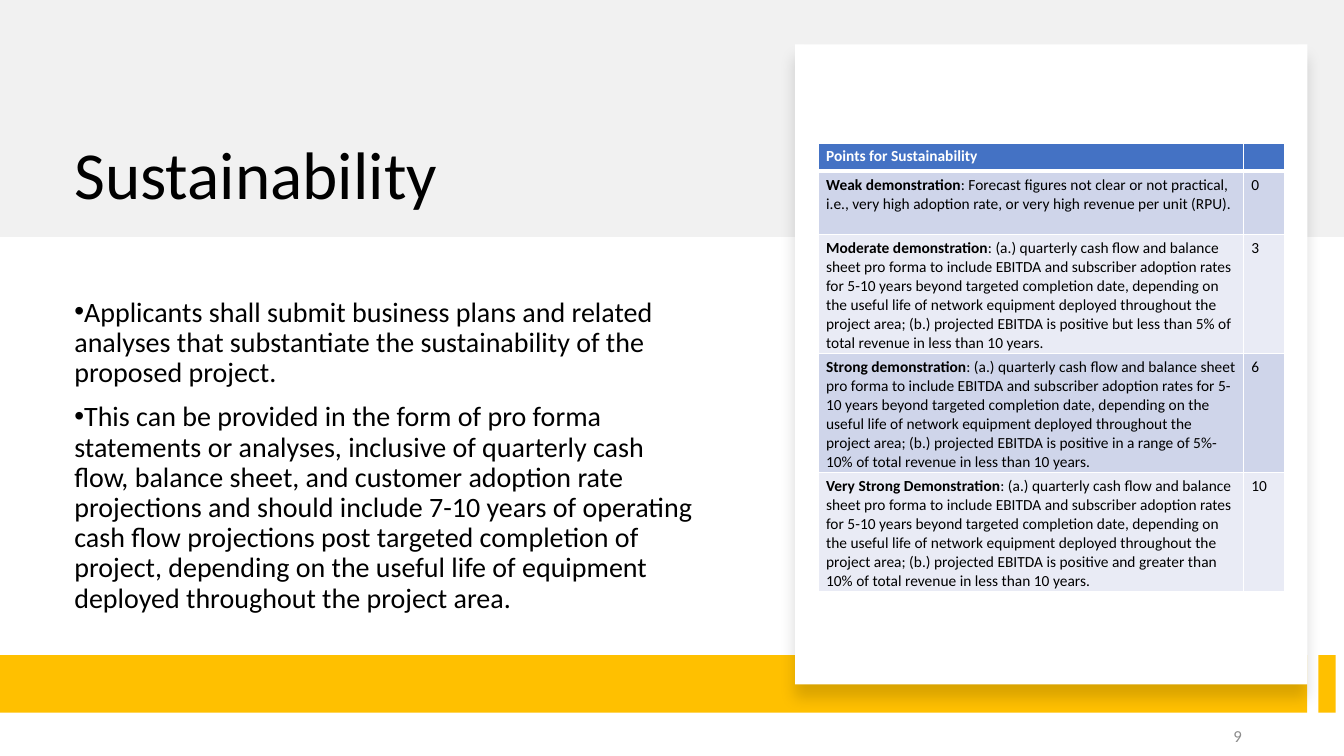
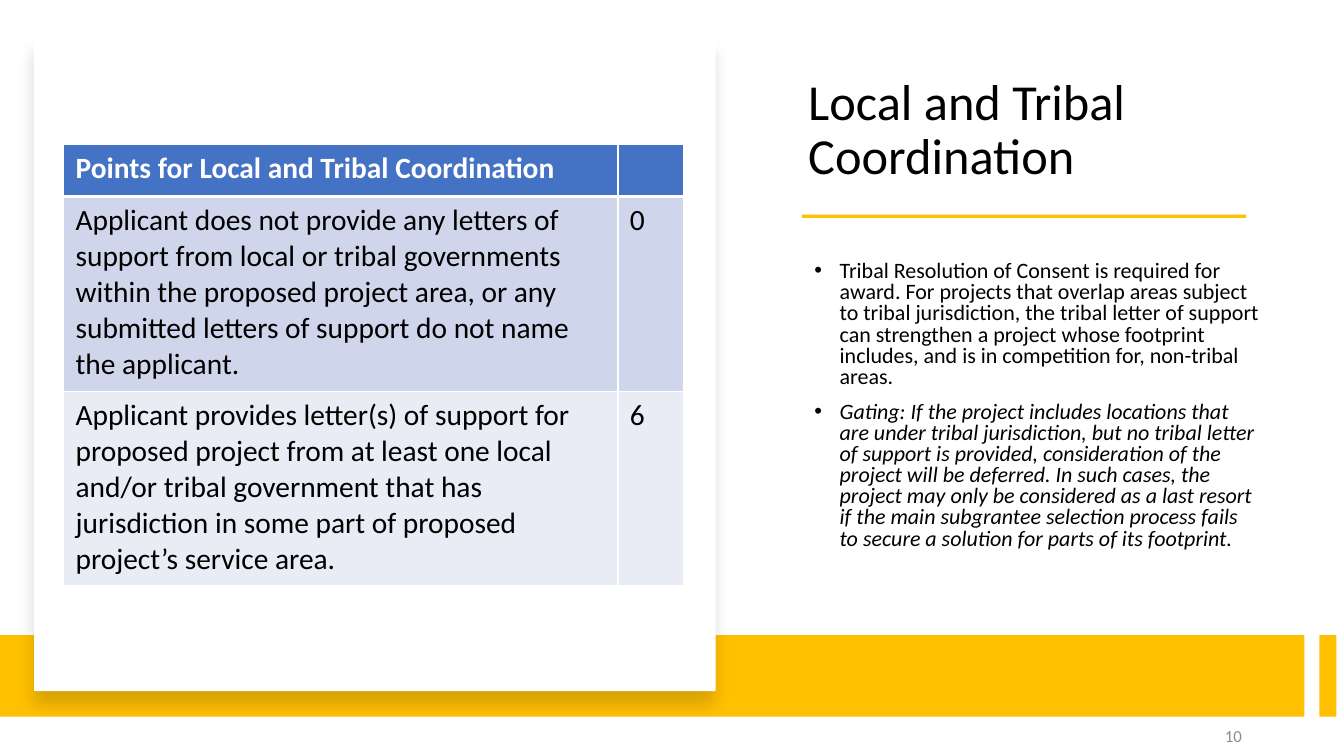
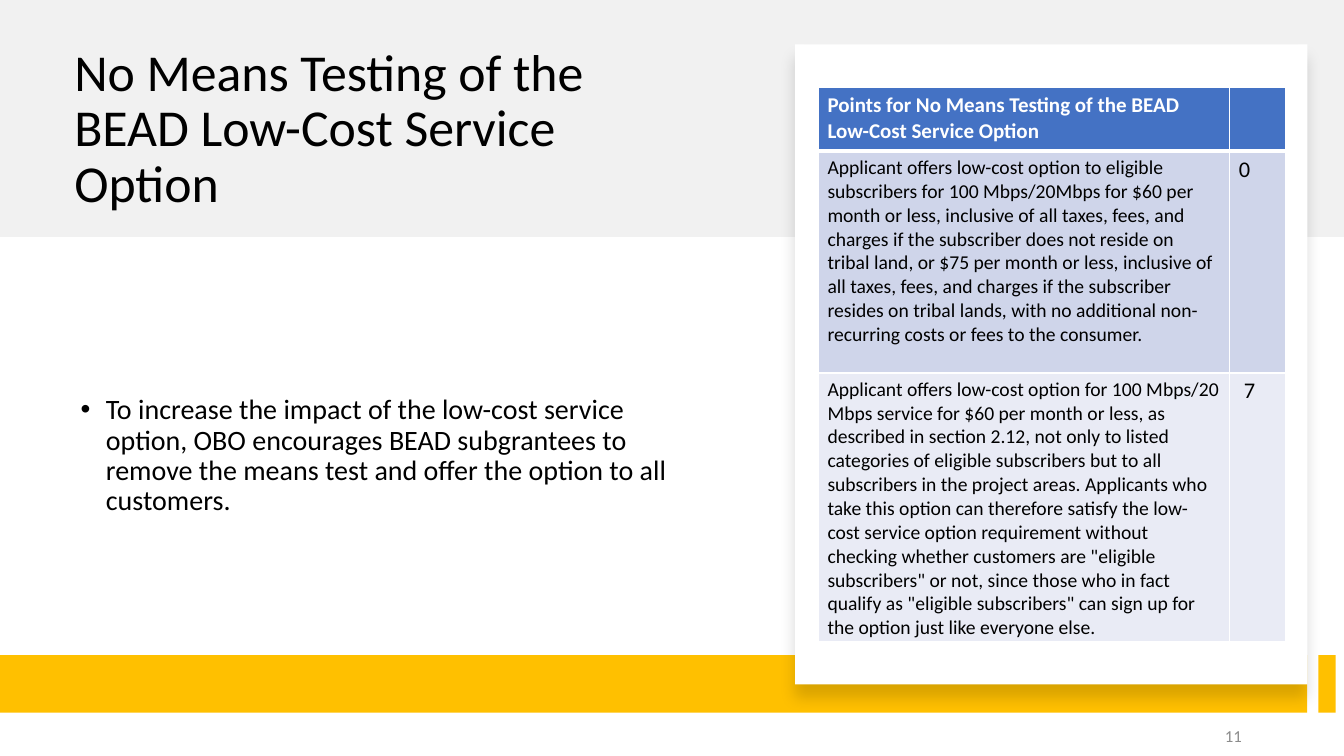
from dataclasses import dataclass
from typing import NamedTuple, Optional

from lxml.etree import SubElement
from pptx import Presentation
from pptx.dml.color import RGBColor
from pptx.enum.shapes import MSO_SHAPE as Preset
from pptx.enum.text import MSO_ANCHOR as Anchor, PP_ALIGN as Align
from pptx.oxml import parse_xml
from pptx.oxml.ns import nsdecls, qn
from pptx.shapes.autoshape import Shape
from pptx.slide import Slide
from pptx.table import _Cell as Cell
from pptx.text.text import TextFrame, _Paragraph as Paragraph
from pptx.util import Pt

FONT = "Calibri"
BLACK, WHITE = "000000", "FFFFFF"
GOLD, BAND_GREY, NUMBER_GREY = "FFC000", "D9D9D9", "8C8C8C"
HEADER_BLUE, ROW_DARK, ROW_LIGHT = "4472C4", "CFD5EA", "E9EBF5"


class Box(NamedTuple):
    left: float
    top: float
    width: float
    height: float


class Run(NamedTuple):
    text: str
    bold: bool = False
    italic: bool = False


class ScoreRow(NamedTuple):
    runs: list[Run]
    score: str
    height: float


@dataclass
class Layout:
    title: Box
    body: Box
    card: Box
    footer_band: Box
    footer_tab: Box
    header_band: Optional[Box] = None
    title_rule: Optional[Box] = None


@dataclass
class ScoreTable:
    left: float
    top: float
    columns: tuple[float, float]
    inset_x: float
    inset_y: float
    header: str
    header_height: float
    header_size: float
    text_size: float
    score_size: float
    rows: list[ScoreRow]


@dataclass
class Page:
    layout: Layout
    number: str
    title: str
    title_size: float
    bullets: list[Run]
    bullet_size: float
    table: ScoreTable
    bullet_margin: float = 22.5
    line_spacing: float = 0.9
    body_bottom_inset: float = 3.6


NUMBER_BOX = Box(678.2, 511.2, 216, 28.8)

CARD_RIGHT = Layout(
    title=Box(46, 27.4, 460, 129),
    body=Box(46, 206.6, 459.4, 238.3),
    card=Box(568, 31.7, 365.8, 457.2),
    footer_band=Box(0, 468, 933.8, 41),
    footer_tab=Box(941.8, 468, 12.2, 41),
    header_band=Box(0, 0, 960, 169.2),
)
CARD_LEFT = Layout(
    title=Box(570.2, 41.8, 337, 94.3),
    body=Box(570.2, 195.8, 337, 239),
    card=Box(24.5, 28, 486.7, 465.8),
    footer_band=Box(0, 453.6, 931.7, 58.3),
    footer_tab=Box(942.5, 453.6, 12.2, 58.3),
    title_rule=Box(573, 153.4, 317, 2.2),
)

PRO_FORMA = (
    ": (a.) quarterly cash flow and balance sheet pro forma to include EBITDA and "
    "subscriber adoption rates for 5-10 years beyond targeted completion date, depending "
    "on the useful life of network equipment deployed throughout the project area; "
    "(b.) projected EBITDA is positive {} of total revenue in less than 10 years."
)


def graded_row(grade: str, margin: str, score: str) -> ScoreRow:
    return ScoreRow([Run(grade, bold=True), Run(PRO_FORMA.format(margin))], score, 83.5)


PAGES = [
    Page(
        CARD_RIGHT, "9", "Sustainability", 48,
        [
            Run("Applicants shall submit business plans and related analyses that "
                "substantiate the sustainability of the proposed project."),
            Run("This can be provided in the form of pro forma statements or analyses, "
                "inclusive of quarterly cash flow, balance sheet, and customer adoption rate "
                "projections and should include 7-10 years of operating cash flow projections "
                "post targeted completion of project, depending on the useful life of "
                "equipment deployed throughout the project area."),
        ],
        20,
        ScoreTable(
            584.6, 102.2, (303.8, 29.5), 5.5, 2.8, "Points for Sustainability", 20.2, 11, 11, 11,
            [
                ScoreRow(
                    [Run("Weak demonstration", bold=True),
                     Run(": Forecast figures not clear or not practical, i.e., very high "
                         "adoption rate, or very high revenue per unit (RPU).")],
                    "0", 45.4),
                graded_row("Moderate demonstration", "but less than 5%", "3"),
                graded_row("Strong demonstration", "in a range of 5%-10%", "6"),
                graded_row("Very Strong Demonstration", "and greater than 10%", "10"),
            ],
        ),
        bullet_margin=0,
    ),
    Page(
        CARD_LEFT, "10", "Local and Tribal Coordination", 36,
        [
            Run("Tribal Resolution of Consent is required for award. For projects that overlap "
                "areas subject to tribal jurisdiction, the tribal letter of support can "
                "strengthen a project whose footprint includes, and is in competition for, "
                "non-tribal areas."),
            Run("Gating: If the project includes locations that are under tribal jurisdiction, "
                "but no tribal letter of support is provided, consideration of the project "
                "will be deferred. In such cases, the project may only be considered as a last "
                "resort if the main subgrantee selection process fails to secure a solution "
                "for parts of its footprint.", italic=True),
        ],
        15.7,
        ScoreTable(
            45.4, 103, (396, 46.8), 8.6, 4.3,
            "Points for Local and Tribal Coordination", 37.4, 21, 21, 21,
            [
                ScoreRow(
                    [Run("Applicant does not provide any letters of support from local or "
                         "tribal governments within the proposed project area, or any "
                         "submitted letters of support do not name the applicant.")],
                    "0", 139),
                ScoreRow(
                    [Run("Applicant provides letter(s) of support for proposed project from at "
                         "least one local and/or tribal government that has jurisdiction in "
                         "some part of proposed project’s service area.")],
                    "6", 139),
            ],
        ),
        line_spacing=0.8,
        body_bottom_inset=54,
    ),
    Page(
        CARD_RIGHT, "11", "No Means Testing of the BEAD Low-Cost Service Option", 37,
        [
            Run("To increase the impact of the low-cost service option, OBO encourages BEAD "
                "subgrantees to remove the means test and offer the option to all customers."),
        ],
        20,
        ScoreTable(
            584.6, 62.6, (293.8, 39.6), 6.5, 3.4,
            "Points for No Means Testing of the BEAD Low-Cost Service Option", 45.4, 15, 14, 16,
            [
                ScoreRow(
                    [Run("Applicant offers low-cost option to eligible subscribers for 100 "
                         "Mbps/20Mbps for $60 per month or less, inclusive of all taxes, fees, "
                         "and charges if the subscriber does not reside on tribal land, or $75 "
                         "per month or less, inclusive of all taxes, fees, and charges if the "
                         "subscriber resides on tribal lands, with no additional non-recurring "
                         "costs or fees to the consumer.")],
                    "0", 158.4),
                ScoreRow(
                    [Run("Applicant offers low-cost option for 100 Mbps/20 Mbps service for $60 "
                         "per month or less, as described in section 2.12, not only to listed "
                         "categories of eligible subscribers but to all subscribers in the "
                         "project areas. Applicants who take this option can therefore satisfy "
                         "the low-cost service option requirement without checking whether "
                         'customers are "eligible subscribers" or not, since those who in fact '
                         'qualify as "eligible subscribers" can sign up for the option just '
                         "like everyone else.")],
                    " 7", 191.5),
            ],
        ),
    ),
]


def rgb(hex_colour: str) -> RGBColor:
    return RGBColor.from_string(hex_colour)


def points(box: Box) -> list[Pt]:
    return [Pt(length) for length in box]


def add_rectangle(slide: Slide, box: Box, colour: str) -> Shape:
    shape = slide.shapes.add_shape(Preset.RECTANGLE, *points(box))
    shape.shadow.inherit = False
    shape.fill.solid()
    shape.fill.fore_color.rgb = rgb(colour)
    shape.line.fill.background()
    return shape


def add_header_band(slide: Slide, box: Box) -> None:
    """Draw the pale band, 35 % opaque."""
    band = add_rectangle(slide, box, BAND_GREY)
    colour = band._element.spPr.find(f"{qn('a:solidFill')}/{qn('a:srgbClr')}")
    SubElement(colour, qn("a:alpha"), val="35000")


def add_card(slide: Slide, box: Box) -> None:
    """Draw the white card with a soft shadow below it."""
    card = add_rectangle(slide, box, WHITE)
    effects = card._element.spPr.find(qn("a:effectLst"))
    shadow = SubElement(effects, qn("a:outerShdw"), blurRad=str(Pt(11)), dist=str(Pt(10)),
                        dir="5400000", algn="t", rotWithShape="0")
    colour = SubElement(shadow, qn("a:srgbClr"), val=BLACK)
    SubElement(colour, qn("a:alpha"), val="15000")


def add_run(paragraph: Paragraph, content: Run, size: float, colour: str) -> None:
    run = paragraph.add_run()
    run.text = content.text
    font = run.font
    font.name, font.size = FONT, Pt(size)
    font.bold, font.italic = content.bold, content.italic
    font.color.rgb = rgb(colour)


def add_text_frame(slide: Slide, box: Box, anchor: Anchor) -> TextFrame:
    frame = slide.shapes.add_textbox(*points(box)).text_frame
    frame.word_wrap = True
    frame.vertical_anchor = anchor
    return frame


def add_title(slide: Slide, page: Page) -> None:
    paragraph = add_text_frame(slide, page.layout.title, Anchor.BOTTOM).paragraphs[0]
    paragraph.line_spacing = 0.9
    add_run(paragraph, Run(page.title), page.title_size, BLACK)


def add_body(slide: Slide, page: Page) -> None:
    frame = add_text_frame(slide, page.layout.body, Anchor.MIDDLE)
    frame.margin_bottom = Pt(page.body_bottom_inset)
    for index, bullet in enumerate(page.bullets):
        paragraph = frame.add_paragraph() if index else frame.paragraphs[0]
        paragraph.line_spacing = page.line_spacing
        paragraph.space_before = Pt(10)
        properties = paragraph._p.get_or_add_pPr()
        properties.set("marL", str(Pt(page.bullet_margin)))
        properties.set("indent", str(Pt(-18)))
        SubElement(properties, qn("a:buFont"), typeface="Arial")
        SubElement(properties, qn("a:buChar"), char="•")
        add_run(paragraph, bullet, page.bullet_size, BLACK)


def add_number(slide: Slide, number: str) -> None:
    paragraph = add_text_frame(slide, NUMBER_BOX, Anchor.MIDDLE).paragraphs[0]
    paragraph.alignment = Align.RIGHT
    paragraph.space_after = Pt(6)
    add_run(paragraph, Run(number), 12, NUMBER_GREY)


def set_borders(cell: Cell, top: float, bottom: float) -> None:
    """Give the cell white borders, 1 pt at the sides."""
    properties = cell._tc.get_or_add_tcPr()
    widths = {"lnL": 1, "lnR": 1, "lnT": top, "lnB": bottom}
    for position, (tag, width) in enumerate(widths.items()):
        properties.insert(position, parse_xml(
            f'<a:{tag} {nsdecls("a")} w="{Pt(width)}"><a:solidFill>'
            f'<a:srgbClr val="{WHITE}"/></a:solidFill></a:{tag}>'))


def fill_cell(cell: Cell, runs: list[Run], size: float, colour: str, fill: str,
              style: ScoreTable) -> None:
    cell.fill.solid()
    cell.fill.fore_color.rgb = rgb(fill)
    cell.margin_left = cell.margin_right = Pt(style.inset_x)
    cell.margin_top = cell.margin_bottom = Pt(style.inset_y)
    paragraph = cell.text_frame.paragraphs[0]
    for run in runs:
        add_run(paragraph, run, size, colour)
    if not runs:
        SubElement(paragraph._p, qn("a:endParaRPr"), sz=str(round(size * 100)))


def add_score_table(slide: Slide, style: ScoreTable) -> None:
    heights = [style.header_height] + [row.height for row in style.rows]
    box = Box(style.left, style.top, sum(style.columns), sum(heights))
    table = slide.shapes.add_table(len(heights), len(style.columns), *points(box)).table
    for column, width in zip(table.columns, style.columns):
        column.width = Pt(width)
    for row, height in zip(table.rows, heights):
        row.height = Pt(height)

    header_runs = ([Run(style.header, bold=True)], [])
    for column, runs in enumerate(header_runs):
        cell = table.cell(0, column)
        fill_cell(cell, runs, style.header_size, WHITE, HEADER_BLUE, style)
        set_borders(cell, top=1, bottom=3)

    for index, row in enumerate(style.rows, start=1):
        fill = ROW_DARK if index % 2 else ROW_LIGHT
        contents = ((row.runs, style.text_size), ([Run(row.score)], style.score_size))
        for column, (runs, size) in enumerate(contents):
            cell = table.cell(index, column)
            fill_cell(cell, runs, size, BLACK, fill, style)
            set_borders(cell, top=3 if index == 1 else 1, bottom=1)


def add_page(presentation: Presentation, page: Page) -> None:
    slide = presentation.slides.add_slide(presentation.slide_layouts[6])
    layout = page.layout
    if layout.header_band:
        add_header_band(slide, layout.header_band)
    add_title(slide, page)
    add_body(slide, page)
    add_rectangle(slide, layout.footer_band, GOLD)
    add_card(slide, layout.card)
    if layout.title_rule:
        add_rectangle(slide, layout.title_rule, GOLD)
    add_rectangle(slide, layout.footer_tab, GOLD)
    add_number(slide, page.number)
    add_score_table(slide, page.table)


def main() -> None:
    presentation = Presentation()
    presentation.slide_width, presentation.slide_height = Pt(960), Pt(540)
    for page in PAGES:
        add_page(presentation, page)
    presentation.save("out.pptx")


if __name__ == "__main__":
    main()
